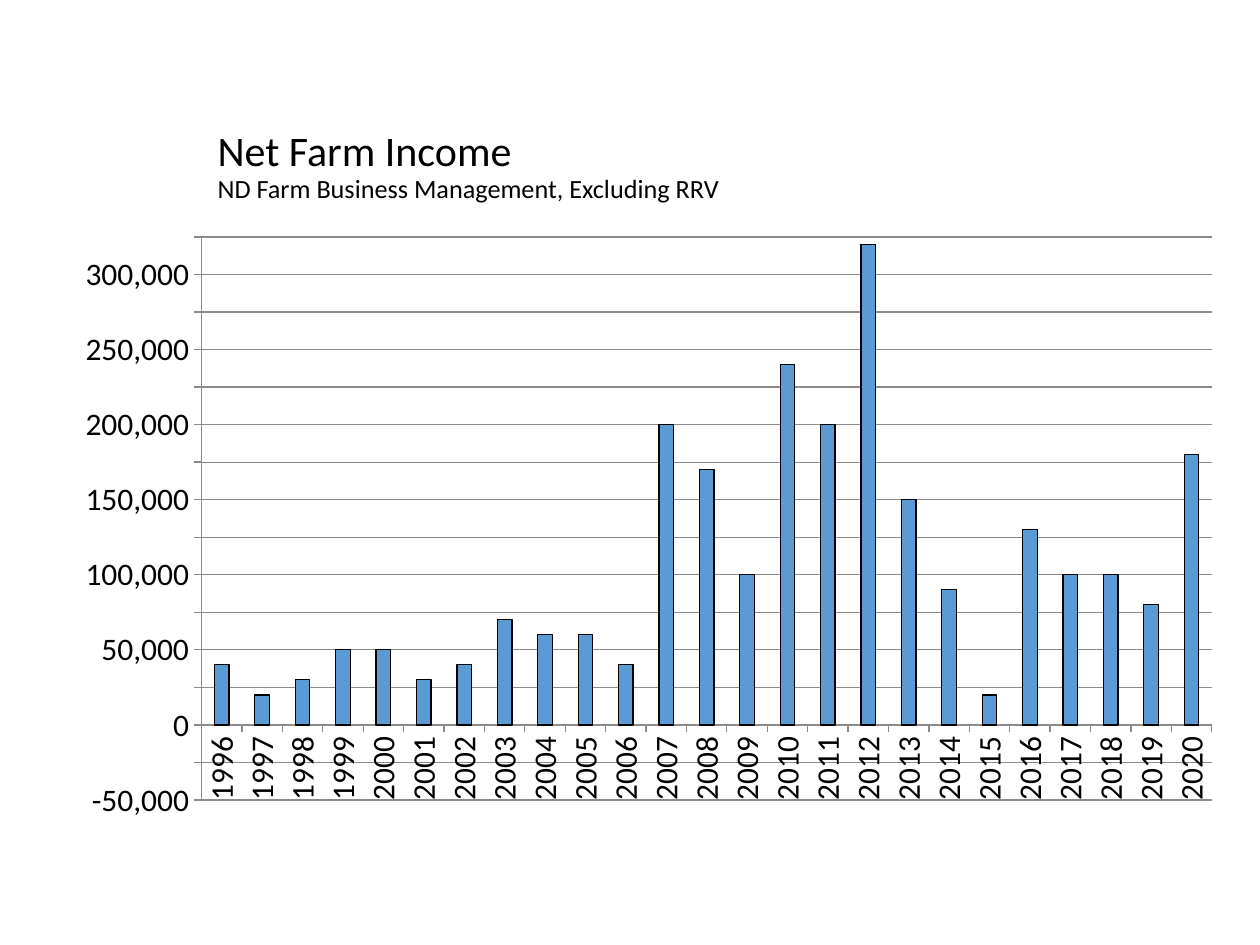
import pptx
import pptx.chart.data
import pptx.dml.color
import pptx.enum.chart
import pptx.enum.text
import pptx.util
from lxml import etree

SCALE = 914400 / 126


def px(length):
    return pptx.util.Emu(round(length * SCALE))


def color(value):
    return pptx.dml.color.RGBColor.from_string(value)


deck = pptx.Presentation()
deck.slide_width = px(1260)
deck.slide_height = px(945)
page = deck.slides.add_slide(deck.slide_layouts[5])

title = page.shapes.title
title.left, title.top, title.width, title.height = px(205), px(119), px(843), px(97)
frame = title.text_frame
frame.word_wrap = True
frame.auto_size = pptx.enum.text.MSO_AUTO_SIZE.NONE
frame.vertical_anchor = pptx.enum.text.MSO_ANCHOR.MIDDLE
para = frame.paragraphs[0]
para.alignment = pptx.enum.text.PP_ALIGN.LEFT
para.line_spacing = 0.9
for text, size in [("Net Farm Income", 24), ("ND Farm Business Management, Excluding RRV", 15)]:
    if para.runs:
        para.add_line_break()
    span = para.add_run()
    span.text = text
    span.font.name = "Calibri"
    span.font.size = pptx.util.Pt(size)
    span.font.color.rgb = color("000000")

income = [
    40000, 20000, 30000, 50000, 50000, 30000, 40000, 70000, 60000,
    60000, 40000, 200000, 170000, 100000, 240000, 200000, 320000,
    150000, 90000, 20000, 130000, 100000, 100000, 80000, 180000,
]
data = pptx.chart.data.CategoryChartData(number_format="#,##0")
data.categories = [str(year) for year in range(1996, 2021)]
data.add_series("Series 1", income)
chart = page.shapes.add_chart(
    pptx.enum.chart.XL_CHART_TYPE.COLUMN_CLUSTERED,
    px(64), px(221), px(1156), px(598), data,
).chart
chart.has_legend = False
chart.has_title = False
chart.font.name = "Calibri"
chart.font.size = pptx.util.Pt(18)
chart.font.color.rgb = color("000000")

plot = chart.plots[0]
plot.gap_width = 177
plot.vary_by_categories = False
bars = plot.series[0]
bars.invert_if_negative = False
bars.format.fill.solid()
bars.format.fill.fore_color.rgb = color("5B9BD5")
bars.format.line.color.rgb = color("000000")
bars.format.line.width = pptx.util.Pt(0.75)

years = chart.category_axis
amounts = chart.value_axis
amounts.minimum_scale = -50000
amounts.maximum_scale = 325000
amounts.major_unit = 25000
amounts.has_major_gridlines = True
amounts.tick_labels.number_format = "#,##0"
amounts.tick_labels.number_format_is_linked = False
for axis in (years, amounts):
    axis.major_tick_mark = pptx.enum.chart.XL_TICK_MARK.OUTSIDE
    axis.minor_tick_mark = pptx.enum.chart.XL_TICK_MARK.NONE
    axis.tick_labels.font.size = pptx.util.Pt(18)
for line in (years.format.line, amounts.format.line, amounts.major_gridlines.format.line):
    line.color.rgb = color("8B8B8B")
    line.width = pptx.util.Pt(0.75)

CHART = "{http://schemas.openxmlformats.org/drawingml/2006/chart}"
DRAWING = "{http://schemas.openxmlformats.org/drawingml/2006/main}"
body = years._element.find(f"{CHART}txPr/{DRAWING}bodyPr")
body.set("rot", "-5400000")
body.set("vert", "horz")

area = chart._chartSpace.chart.plotArea
for old in area.findall(CHART + "layout"):
    area.remove(old)
layout = etree.Element(CHART + "layout")
area.insert(0, layout)
manual = etree.SubElement(layout, CHART + "manualLayout")
for name, value in [
    ("layoutTarget", "inner"), ("xMode", "edge"), ("yMode", "edge"),
    ("x", "0.119"), ("y", "0.027"), ("w", "0.874"), ("h", "0.947"),
]:
    etree.SubElement(manual, CHART + name).set("val", value)

deck.save("out.pptx")
